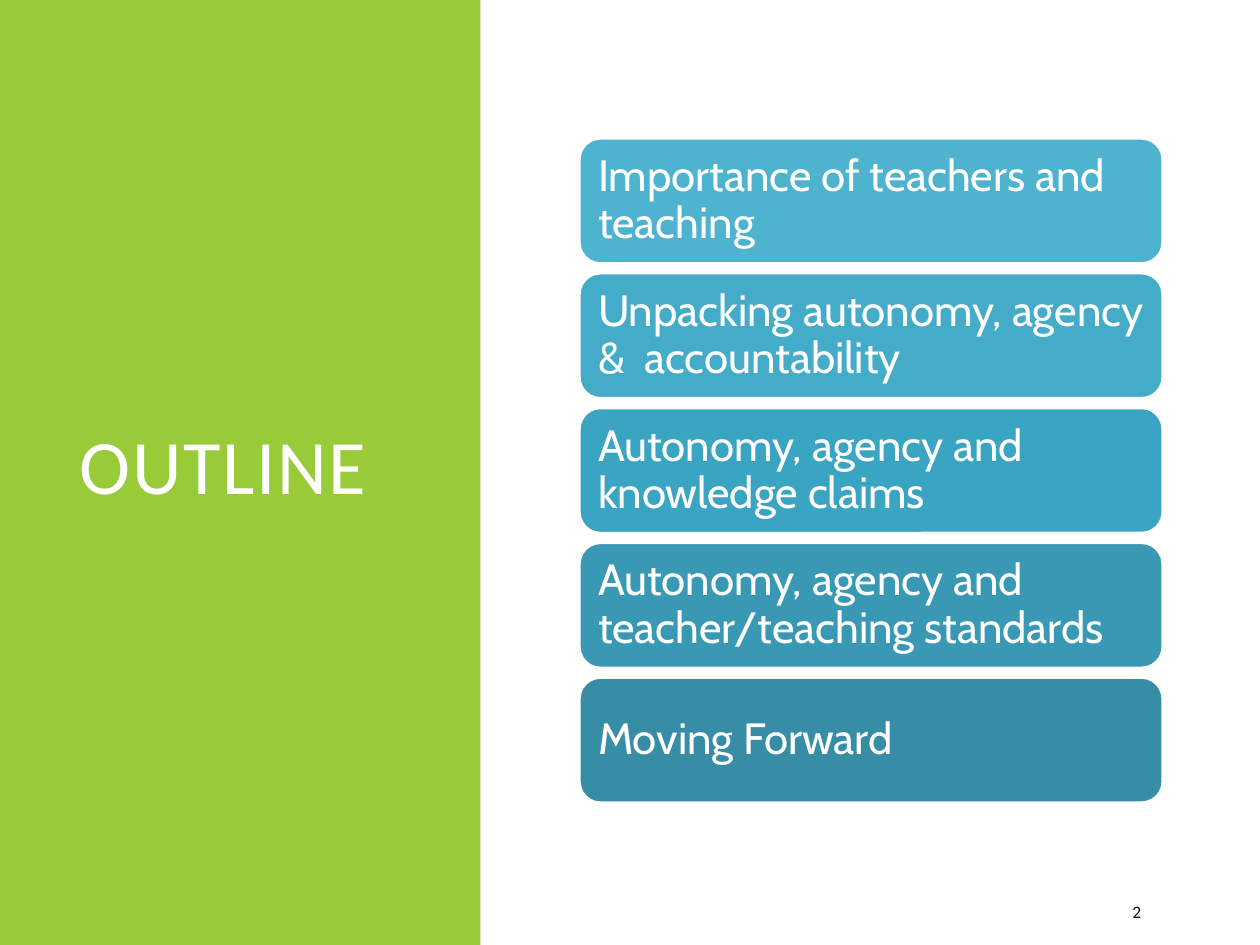
import pptx
import pptx.util
import pptx.dml.color
import pptx.enum.shapes
import pptx.enum.text

Pt = pptx.util.Pt
RGBColor = pptx.dml.color.RGBColor
SHAPE = pptx.enum.shapes.MSO_SHAPE
MIDDLE = pptx.enum.text.MSO_ANCHOR.MIDDLE
LEFT = pptx.enum.text.PP_ALIGN.LEFT

GREEN = RGBColor(0x99, 0xCB, 0x38)
WHITE = RGBColor(0xFF, 0xFF, 0xFF)
INK = RGBColor(0x0D, 0x0D, 0x0D)

# Outline topics with their shades, from light to dark
TOPICS = [
    ("Importance of teachers and teaching", RGBColor(0x4E, 0xB3, 0xCF)),
    ("Unpacking autonomy, agency &  accountability", RGBColor(0x44, 0xAC, 0xC9)),
    ("Autonomy, agency and knowledge claims", RGBColor(0x3A, 0xA4, 0xC3)),
    ("Autonomy, agency and teacher/teaching standards", RGBColor(0x39, 0x99, 0xB4)),
    ("Moving Forward", RGBColor(0x37, 0x8D, 0xA6)),
]


def set_text(s, text, font, size, color, spacing=1.0):
    tf = s.text_frame
    tf.text = text
    tf.word_wrap = True
    tf.auto_size = pptx.enum.text.MSO_AUTO_SIZE.NONE
    tf.vertical_anchor = MIDDLE
    p = tf.paragraphs[0]
    p.alignment = LEFT
    p.line_spacing = spacing
    r = p.runs[0]
    r.font.name = font
    r.font.size = Pt(size)
    r.font.color.rgb = color
    return r


def add_title_panel(slide, left, top, width, height):
    # Green panel, placed behind the title
    panel = slide.shapes.add_shape(SHAPE.RECTANGLE, Pt(left), Pt(top), Pt(width), Pt(height))
    panel.shadow.inherit = False
    panel.fill.solid()
    panel.fill.fore_color.rgb = GREEN
    panel.line.fill.background()
    title = slide.shapes.title
    title._element.addprevious(panel._element)

    # Title
    title.left, title.top = Pt(left + 38.2), Pt(top + 50.4)
    title.width, title.height = Pt(201.6), Pt(438.5)
    r = set_text(title, "OUTLINE", "Calibri", 44, WHITE, 0.8)
    r.font._element.set("spc", "100")


def add_topics(slide, left, top, width, height, gap=5.76):
    # Equal bars stacked with equal gaps
    bar_height = (height - gap * (len(TOPICS) - 1)) / len(TOPICS)
    for i, (text, color) in enumerate(TOPICS):
        y = top + i * (bar_height + gap)
        bar = slide.shapes.add_shape(
            SHAPE.ROUNDED_RECTANGLE, Pt(left), Pt(y), Pt(width), Pt(bar_height))
        bar.shadow.inherit = False
        bar.fill.solid()
        bar.fill.fore_color.rgb = color
        bar.line.color.rgb = WHITE
        bar.line.width = Pt(1.25)
        set_text(bar, text, "Cabin", 25, WHITE, 0.9)
        tf = bar.text_frame
        tf.margin_left = tf.margin_right = tf.margin_top = tf.margin_bottom = Pt(7.2)


def add_page_number(slide, left, top, width, height):
    s = slide.shapes.add_textbox(Pt(left), Pt(top), Pt(width), Pt(height))
    set_text(s, "2", "Calibri", 10, INK)
    s.text_frame.paragraphs[0].space_after = Pt(6)


def main():
    prs = pptx.Presentation()
    prs.slide_width, prs.slide_height = Pt(720), Pt(540)
    slide = prs.slides.add_slide(prs.slide_layouts[5])
    add_title_panel(slide, 0, 0, 274.5, 540)
    add_topics(slide, 331.2, 79.2, 333.1, 379.4)
    add_page_number(slide, 640, 509.8, 57.6, 21.6)
    prs.save("out.pptx")


if __name__ == "__main__":
    main()
